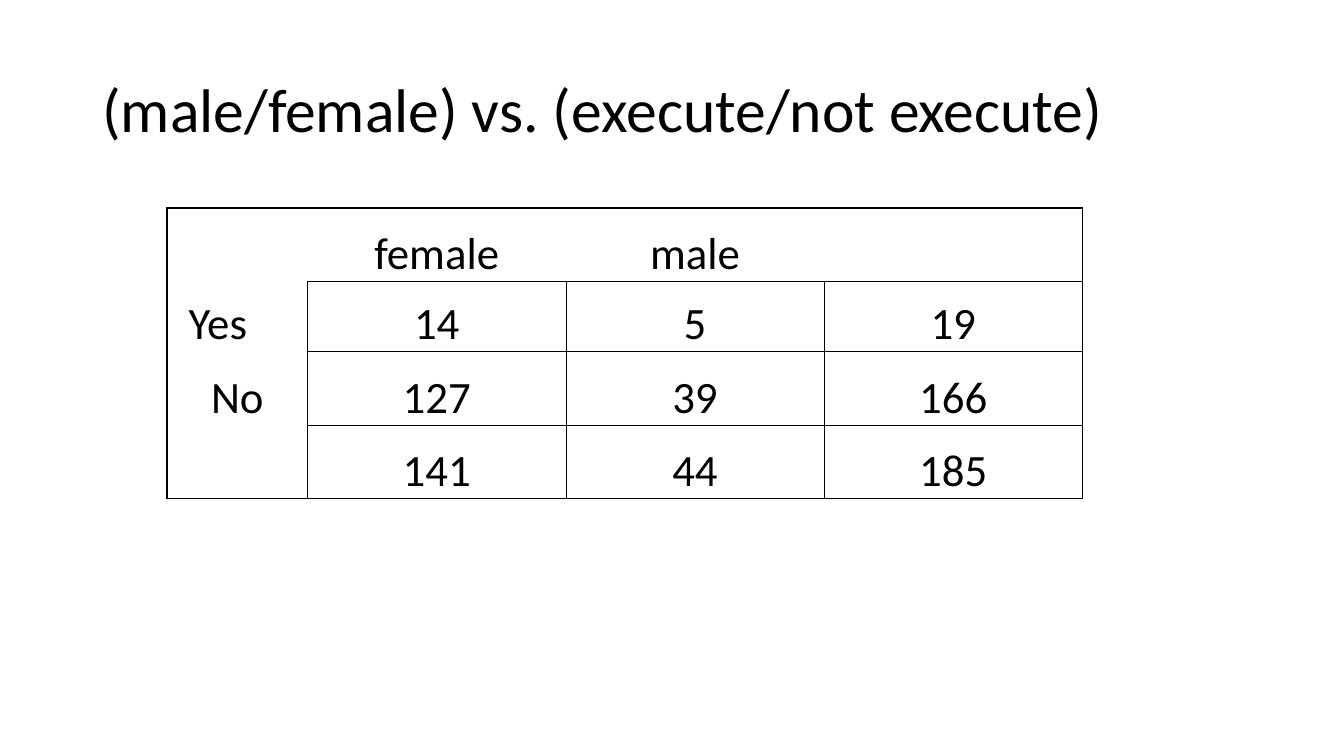
from lxml import etree
from pptx import Presentation, util as u
from pptx.dml.color import RGBColor
from pptx.enum import text
from pptx.oxml import ns

PX = 9525
COLORS = {"ink": "000000"}
FONT = "Calibri"

COLUMN_WIDTHS = [134, 246, 246, 246]
ROW_HEIGHTS = [70, 67, 70, 70]
COUNTS = [
    ["", "female", "male", ""],
    ["Yes", "14", "5", "19"],
    ["No", "127", "39", "166"],
    ["", "141", "44", "185"],
]
# One digit per side (left, right, top, bottom), in half points
BORDERS = [
    ["2020", "0022", "0022", "0221"],
    ["2200", "2121", "1221", "2211"],
    ["2200", "2112", "1212", "2211"],
    ["2102", "1122", "1122", "1212"],
]
YES_INDENT = 38


def px(length):
    return u.Emu(length * PX)


def style_runs(paragraph, size):
    for run in paragraph.runs:
        run.font.name = FONT
        run.font.size = u.Pt(size)
        run.font.color.rgb = RGBColor.from_string(COLORS["ink"])


def set_borders(cell, half_points):
    properties = cell._tc.get_or_add_tcPr()
    for index, (side, digit) in enumerate(zip("LRTB", half_points)):
        line = etree.Element(ns.qn(f"a:ln{side}"), w=str(u.Pt(int(digit) / 2)))
        if digit == "0":
            etree.SubElement(line, ns.qn("a:noFill"))
        else:
            fill = etree.SubElement(line, ns.qn("a:solidFill"))
            etree.SubElement(fill, ns.qn("a:srgbClr"), val=COLORS["ink"])
        properties.insert(index, line)


def fill_cell(cell, label, half_points):
    cell.fill.background()
    cell.vertical_anchor = text.MSO_ANCHOR.BOTTOM
    cell.margin_left = cell.margin_right = cell.margin_top = px(1)
    cell.margin_bottom = 0
    paragraph = cell.text_frame.paragraphs[0]
    paragraph.text = label
    paragraph.alignment = text.PP_ALIGN.CENTER
    style_runs(paragraph, 32)
    set_borders(cell, half_points)


def add_title(slide, wording):
    title = slide.shapes.add_textbox(px(88), px(38), px(1104), px(139))
    frame = title.text_frame
    frame.word_wrap = True
    frame.vertical_anchor = text.MSO_ANCHOR.MIDDLE
    frame.text = wording
    frame.paragraphs[0].line_spacing = 0.9
    style_runs(frame.paragraphs[0], 44)


def add_counts_table(slide):
    counts = slide.shapes.add_table(
        len(ROW_HEIGHTS), len(COLUMN_WIDTHS), px(159), px(198),
        px(sum(COLUMN_WIDTHS)), px(sum(ROW_HEIGHTS))).table
    counts.first_row = counts.horz_banding = False
    for column, width in zip(counts.columns, COLUMN_WIDTHS):
        column.width = px(width)
    for row, height, labels, borders in zip(counts.rows, ROW_HEIGHTS, COUNTS, BORDERS):
        row.height = px(height)
        for cell, label, half_points in zip(row.cells, labels, borders):
            fill_cell(cell, label, half_points)
    counts.cell(1, 0).margin_right = px(YES_INDENT)


def main():
    deck = Presentation()
    deck.slide_width, deck.slide_height = px(1280), px(720)
    slide = deck.slides.add_slide(deck.slide_layouts[6])
    add_title(slide, "(male/female) vs. (execute/not execute)")
    add_counts_table(slide)
    deck.save("out.pptx")


if __name__ == "__main__":
    main()
